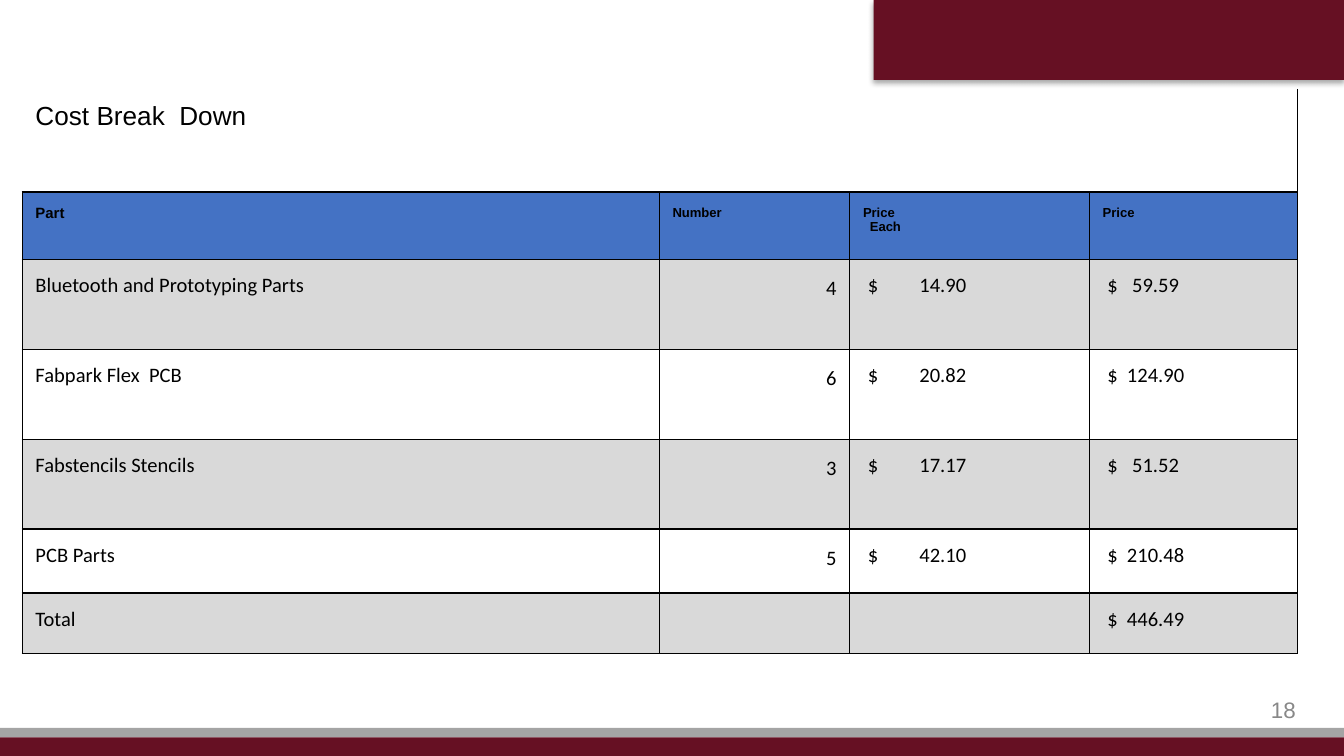
from lxml import etree
from pptx import Presentation
from pptx import util as u
from pptx.dml.color import RGBColor
from pptx.enum import shapes, text
from pptx.oxml import ns

MAROON = RGBColor(0x66, 0x10, 0x23)
SILVER = RGBColor(0xA4, 0xA4, 0xA4)
BLUE = RGBColor(0x44, 0x72, 0xC4)
BAND = RGBColor(0xD9, 0xD9, 0xD9)
BLACK = RGBColor(0, 0, 0)
GREY = RGBColor(0x88, 0x88, 0x88)

TITLE = dict(name="Arial", size=u.Pt(14), bold=False)
HEAD = dict(name="Arial", size=u.Pt(7), bold=True)
FIRST_HEAD = dict(HEAD, size=u.Pt(8))
BODY = dict(name="Calibri", size=u.Pt(11), bold=False)
NUMBER = dict(name="Arial", size=u.Pt(12), bold=False)

COLUMNS = [12.04, 3.6, 4.53, 3.93]
ROWS = [1.95, 1.27, 1.7, 1.7, 1.7, 1.21, 1.15]
HEADINGS = ["Part", "Number", "Price\nEach", "Price"]
COSTS = [
    ["Bluetooth and Prototyping Parts", "4", "$\t14.90", "$\t59.59"],
    ["Fabpark Flex  PCB", "6", "$\t20.82", "$\t124.90"],
    ["Fabstencils Stencils", "3", "$\t17.17", "$\t51.52"],
    ["PCB Parts", "5", "$\t42.10", "$\t210.48"],
    ["Total", "", "", "$\t446.49"],
]
AMOUNT_TABS = {2: 1.42, 3: 0.91}  # centre of the amounts, by column


def add_xml(parent, tag, **attributes):
    values = {key: str(value) for key, value in attributes.items()}
    return etree.SubElement(parent, ns.qn(tag), values)


class SlideBuilder:
    def __init__(self, page):
        self.page = page

    def add_span(self, para, words, style, color=BLACK):
        span = para.add_run()
        span.text = words
        for key, value in style.items():
            setattr(span.font, key, value)
        span.font.color.rgb = color

    def bar(self, left, top, width, height, color):
        box = self.page.shapes.add_shape(
            shapes.MSO_SHAPE.RECTANGLE,
            u.Cm(left), u.Cm(top), u.Cm(width), u.Cm(height))
        box.shadow.inherit = False
        box.fill.solid()
        box.fill.fore_color.rgb = color
        box.line.fill.background()
        return box

    def shadow(self, box):
        effects = box._element.spPr.find(ns.qn("a:effectLst"))
        outer = add_xml(effects, "a:outerShdw", blurRad=u.Pt(3.1),
                        dist=u.Pt(1.8), dir=5400000, rotWithShape=0)
        shade = add_xml(outer, "a:srgbClr", val=BLACK)
        add_xml(shade, "a:alpha", val=35000)

    def label(self, left, top, width, height, words, style, color):
        box = self.page.shapes.add_textbox(
            u.Cm(left), u.Cm(top), u.Cm(width), u.Cm(height))
        frame = box.text_frame
        frame.word_wrap = True
        frame.vertical_anchor = text.MSO_ANCHOR.MIDDLE
        para = frame.paragraphs[0]
        para.alignment = text.PP_ALIGN.RIGHT
        self.add_span(para, words, style, color)

    def table(self, left, top, columns, rows):
        frame = self.page.shapes.add_table(
            len(rows), len(columns), u.Cm(left), u.Cm(top),
            u.Cm(sum(columns)), u.Cm(sum(rows)))
        grid = frame.table
        grid.first_row = grid.horz_banding = False
        for column, width in zip(grid.columns, columns):
            column.width = u.Cm(width)
        for row, height in zip(grid.rows, rows):
            row.height = u.Cm(height)
        return grid

    def cell(self, cell, words, style, fill=None, sides="LRTB"):
        if fill is None:
            cell.fill.background()
        else:
            cell.fill.solid()
            cell.fill.fore_color.rgb = fill
        self.borders(cell, sides)
        if not words:
            return
        for side in ("left", "right", "top", "bottom"):
            setattr(cell, "margin_" + side, u.Cm(0.25))
        frame = cell.text_frame
        for index, line in enumerate(words.split("\n")):
            para = frame.add_paragraph() if index else frame.paragraphs[0]
            if index:
                para._p.get_or_add_pPr().set("marL", str(u.Cm(0.13)))
            self.add_span(para, line, style)

    def borders(self, cell, sides):
        props = cell._tc.get_or_add_tcPr()
        for index, side in enumerate("LRTB"):
            line = add_xml(props, "a:ln" + side, w=u.Pt(0.75))
            if side in sides:
                paint = add_xml(line, "a:solidFill")
                add_xml(paint, "a:srgbClr", val=BLACK)
            else:
                add_xml(line, "a:noFill")
            props.insert(index, line)

    def count(self, cell):
        para = cell.text_frame.paragraphs[0]
        para.alignment = text.PP_ALIGN.RIGHT
        para.line_spacing = 1.15

    def amount(self, cell, tab):
        cell.margin_left = u.Cm(0.34)
        props = cell.text_frame.paragraphs[0]._p.get_or_add_pPr()
        tabs = add_xml(props, "a:tabLst")
        add_xml(tabs, "a:tab", pos=u.Cm(tab), algn="ctr")


def main():
    deck = Presentation()
    deck.slide_width, deck.slide_height = u.Cm(25.4), u.Cm(14.29)
    builder = SlideBuilder(deck.slides.add_slide(deck.slide_layouts[6]))

    # Corner block and footer bars
    builder.shadow(builder.bar(16.51, 0, 8.89, 1.51, MAROON))
    builder.bar(0, 13.76, 25.4, 0.18, SILVER)
    builder.bar(0, 13.94, 25.4, 0.35, MAROON)
    builder.label(18.82, 13.04, 5.92, 0.76, "18", NUMBER, GREY)

    # Title row across the table
    grid = builder.table(0.42, 1.68, COLUMNS, ROWS)
    last = len(COLUMNS) - 1
    grid.cell(0, 0).merge(grid.cell(0, last))
    for col in range(len(COLUMNS)):
        words = "" if col else "Cost Break  Down"
        sides = "RB" if col in (0, last) else "B"
        builder.cell(grid.cell(0, col), words, TITLE, sides=sides)

    # Headings
    for col, words in enumerate(HEADINGS):
        style = HEAD if col else FIRST_HEAD
        builder.cell(grid.cell(1, col), words, style, BLUE)

    # Costs, every other row shaded
    for index, costs in enumerate(COSTS):
        for col, words in enumerate(costs):
            cell = grid.cell(index + 2, col)
            builder.cell(cell, words, BODY, None if index % 2 else BAND)
            if words and col == 1:
                builder.count(cell)
            elif words and col in AMOUNT_TABS:
                builder.amount(cell, AMOUNT_TABS[col])

    deck.save("out.pptx")


if __name__ == "__main__":
    main()
